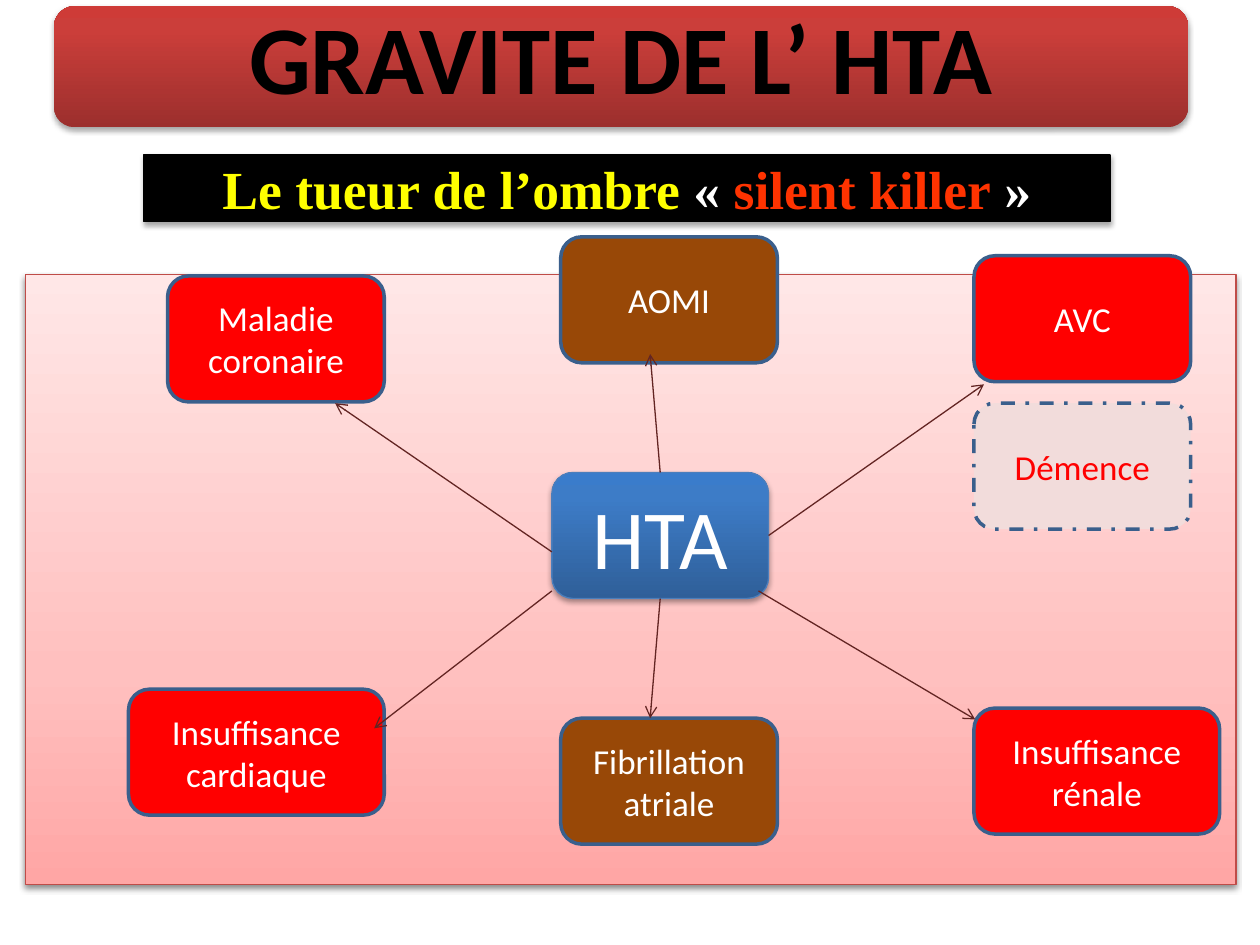
from lxml import etree
from pptx import Presentation
from pptx import util as u
from pptx.dml.color import RGBColor
from pptx.enum import dml, shapes, text
from pptx.oxml.ns import qn

COLORS = {
    "white": "FFFFFF", "black": "000000", "red": "FF0000", "yellow": "FFFF00",
    "orange": "FF3300", "brown": "984807", "pale": "F2DCDB",
    "outline": "3A5F8C", "arrow": "632523", "panel line": "BF4C48",
    "hub line": "4B7EBC",
}
# Stops run from the bottom edge to the top edge.
GRADIENTS = {
    "panel": [(0, "FFA6A5"), (35, "FFC0BF"), (100, "FFE7E7")],
    "hub": [(0, "2F5F99"), (80, "3D7CC7"), (100, "3A7CCB")],
    "title": [(0, "9C2F2D"), (80, "CB3E3A"), (100, "CE3B37")],
}
RECT = shapes.MSO_SHAPE.RECTANGLE
ROUND = shapes.MSO_SHAPE.ROUNDED_RECTANGLE
TOP, BOTTOM, RIGHT = 0, 2, 3


def rgb(name):
    return RGBColor.from_string(COLORS[name])


def add(parent, tag, **attrs):
    return etree.SubElement(parent, qn(tag), {k: str(v) for k, v in attrs.items()})


class Deck:
    """Holds the text style and the slide being drawn."""

    font, size = "Calibri", 20

    def __init__(self, prs):
        self.s = prs.slides.add_slide(prs.slide_layouts[6])

    def box(self, at, fill, line=None, width=2, kind=ROUND):
        """Add a shape; fill names a gradient or a colour."""
        sp = self.s.shapes.add_shape(kind, *map(u.Inches, at))
        sp.shadow.inherit = False
        if fill in GRADIENTS:
            self.gradient(sp, GRADIENTS[fill])
        else:
            sp.fill.solid()
            sp.fill.fore_color.rgb = rgb(fill)
        if line:
            sp.line.color.rgb = rgb(line)
            sp.line.width = u.Pt(width)
        else:
            sp.line.fill.background()
        return sp

    def gradient(self, sp, stops):
        sp.fill.gradient()
        grad = sp._element.spPr.find(qn("a:gradFill"))
        for child in list(grad):
            grad.remove(child)
        stop_list = add(grad, "a:gsLst")
        for pos, color in stops:
            add(add(stop_list, "a:gs", pos=pos * 1000), "a:srgbClr", val=color)
        add(grad, "a:lin", ang=270 * 60000, scaled=0)

    def shadow(self, sp, alpha=35, blur=3.1, dist=1.8):
        effects = sp._element.spPr.find(qn("a:effectLst"))
        outer = add(effects, "a:outerShdw", blurRad=u.Pt(blur), dist=u.Pt(dist),
                    dir=90 * 60000, rotWithShape=0)
        add(add(outer, "a:srgbClr", val=COLORS["black"]), "a:alpha", val=alpha * 1000)

    def label(self, sp, *runs, size=None, font=None, bold=False):
        """Write centred text; each run is a (text, colour) pair."""
        tf = sp.text_frame
        tf.word_wrap = True
        tf.vertical_anchor = text.MSO_ANCHOR.MIDDLE
        p = tf.paragraphs[0]
        p.alignment = text.PP_ALIGN.CENTER
        p.font.name = font or self.font
        p.font.size = u.Pt(size or self.size)
        p.font.bold = bold
        for words, color in runs:
            r = p.add_run()
            r.text = words
            r.font.color.rgb = rgb(color)
        return p

    def arrow(self, start, end, hub, side=None):
        c = self.s.shapes.add_connector(
            shapes.MSO_CONNECTOR.STRAIGHT, *map(u.Inches, start + end))
        if side is not None:
            c.begin_connect(hub, side)
        c.line.color.rgb = rgb("arrow")
        c.line.width = u.Pt(0.75)
        spPr = c._element.spPr
        add(spPr.find(qn("a:ln")), "a:tailEnd", type="arrow")
        add(spPr, "a:effectLst")


def main():
    prs = Presentation()
    prs.slide_width, prs.slide_height = u.Inches(10), u.Inches(7.5)
    deck = Deck(prs)

    panel = deck.box((0.2, 2.18, 9.61, 4.84), "panel", "panel line", 0.75, RECT)
    deck.shadow(panel, 45, 3, 2.4)
    hub = deck.box((4.38, 3.75, 1.72, 1), "hub", "hub line", 0.75)
    deck.shadow(hub)
    deck.label(hub, ("HTA", "white"), size=48)

    complications = [
        ("Maladie coronaire", 1.33, 2.19, 1.72, "red"),
        ("AVC", 7.73, 2.03, 1.72, "red"),
        ("Insuffisance cardiaque", 1.02, 5.47, 2.03, "red"),
        ("Insuffisance rénale", 7.73, 5.62, 1.95, "red"),
        ("Fibrillation atriale", 4.45, 5.7, 1.72, "brown"),
        ("AOMI", 4.45, 1.88, 1.72, "brown"),
    ]
    for words, x, y, w, fill in complications:
        deck.label(deck.box((x, y, w, 1), fill, "outline"), (words, "white"))

    arrows = [
        ((5.24, 3.75), (5.16, 2.81), TOP),
        ((6.02, 4.69), (7.74, 5.71), None),
        ((4.38, 4.69), (2.97, 5.78), None),
        ((5.24, 4.75), (5.16, 5.7), BOTTOM),
        ((4.38, 4.38), (2.66, 3.2), None),
        ((6.1, 4.25), (7.81, 3.05), RIGHT),
    ]
    for start, end, side in arrows:
        deck.arrow(start, end, hub, side)

    dementia = deck.box((7.73, 3.2, 1.72, 1), "pale", "outline")
    dementia.line.dash_style = dml.MSO_LINE.DASH_DOT
    deck.label(dementia, ("Démence", "red"))

    title = deck.box((0.43, 0.05, 9, 0.96), "title")
    deck.shadow(title)
    p = deck.label(title, ("GRAVITE DE L’ HTA", "black"), size=55.5, bold=True)
    p.line_spacing = 0.8

    subtitle = deck.box((1.14, 1.23, 7.67, 0.53), "black", "black", 0.75, RECT)
    deck.shadow(subtitle)
    deck.label(subtitle, ("Le tueur de l’ombre ", "yellow"), ("« ", "white"),
               ("silent killer", "orange"), (" »", "white"),
               size=30.6, font="Times New Roman", bold=True)

    prs.save("out.pptx")


if __name__ == "__main__":
    main()
